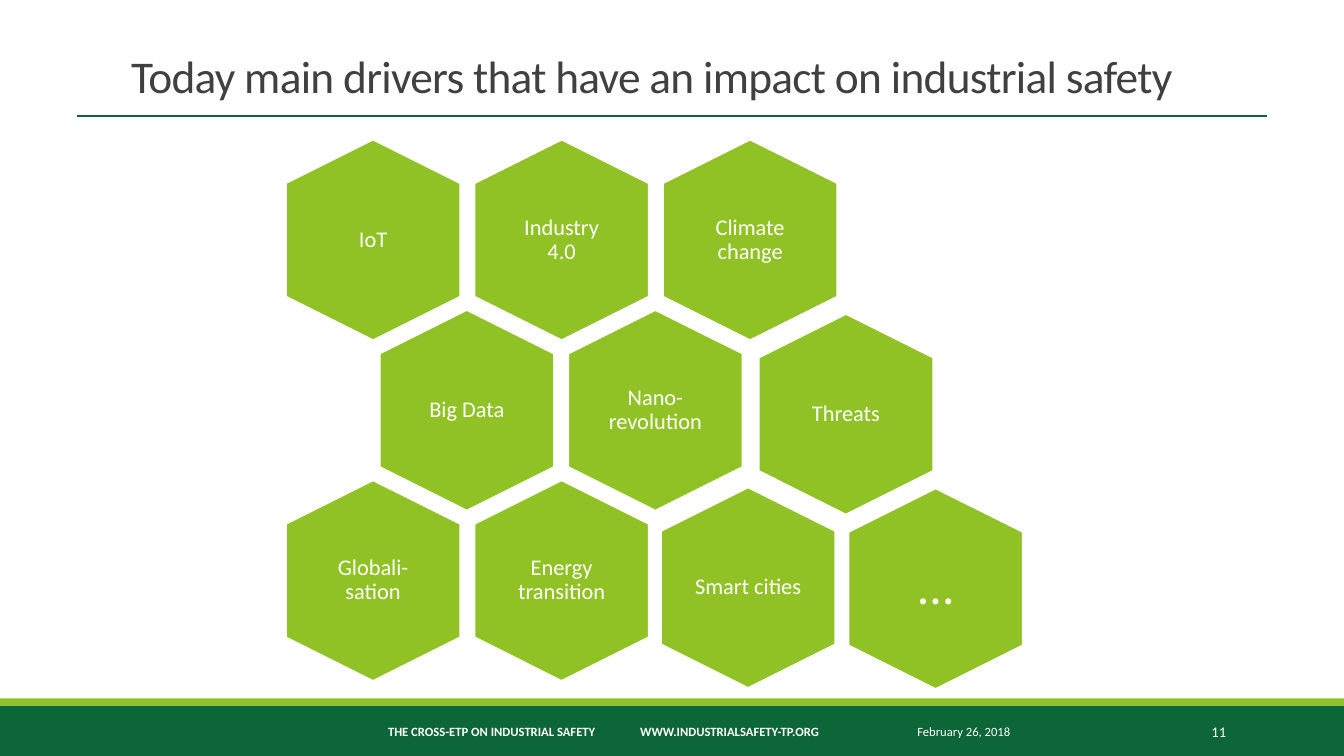
from lxml import etree
from pptx import Presentation
from pptx.dml.color import RGBColor
from pptx.enum.shapes import MSO_CONNECTOR, MSO_SHAPE
from pptx.enum.text import MSO_ANCHOR, MSO_AUTO_SIZE, PP_ALIGN
from pptx.oxml.ns import qn
from pptx.util import Inches, Pt

TITLE = "Today main drivers that have an impact on industrial safety"
# label, column, row, nudge right, nudge down, text inset, text size
DRIVERS = [
    ("IoT", 0, 0, 0, 0, 0, 16),
    ("Industry 4.0", 1, 0, 0, 0, 0.07, 16),
    ("Climate change", 2, 0, 0, 0, 0.07, 16),
    ("Big Data", 0, 1, 0, 0, 0.07, 16),
    ("Nano-revolution", 1, 1, 0, 0, 0, 16),
    ("Threats", 2, 1, 0.02, 0.04, 0.07, 16),
    ("Globali-sation", 0, 2, 0, 0, 0, 16),
    ("Energy transition", 1, 2, 0, 0, 0.07, 16),
    ("Smart cities", 2, 2, -0.02, 0.07, 0, 16),
    ("…", 3, 2, -0.03, 0.08, 0, 36),
]
# text, left, width, alignment, size, bold
FOOTER = [
    ("February 26, 2018", 9, 1.95, PP_ALIGN.LEFT, 9, False),
    ("THE CROSS-ETP ON INDUSTRIAL SAFETY\tWWW.INDUSTRIALSAFETY-TP.ORG",
     3.35, 5.27, PP_ALIGN.CENTER, 9, True),
    ("11", 11.31, 0.95, PP_ALIGN.RIGHT, 10.5, False),
]
COLORS = {"dark": "0D6637", "lime": "90C226", "title": "404040", "white": "FFFFFF"}
FONT = "Calibri"

FIRST_X, FIRST_Y = 3.7, 2.38  # centre of the first hexagon
COLUMN_STEP, ROW_STEP, ODD_ROW_SHIFT = 1.87, 1.69, 0.93
HEX_LENGTH, HEX_BREADTH = 1.99, 1.73
LABEL_WIDTH, LABEL_HEIGHT = 1.19, 1.37


def color(name):
    return RGBColor.from_string(COLORS[name])


def write(frame, text, size, ink="white", align=PP_ALIGN.CENTER,
          anchor=MSO_ANCHOR.MIDDLE, bold=False, spacing=None):
    frame.word_wrap = True
    frame.auto_size = MSO_AUTO_SIZE.NONE
    frame.vertical_anchor = anchor
    paragraph = frame.paragraphs[0]
    paragraph.alignment = align
    paragraph.line_spacing = spacing
    run = paragraph.add_run()
    run.text = text
    run.font.name = FONT
    run.font.size = Pt(size)
    run.font.bold = bold
    run.font.color.rgb = color(ink)
    return run


def add_filled(slide, preset, left, top, width, height, fill):
    shape = slide.shapes.add_shape(
        preset, Inches(left), Inches(top), Inches(width), Inches(height))
    shape.shadow.inherit = False
    shape.fill.solid()
    shape.fill.fore_color.rgb = color(fill)
    shape.line.fill.background()
    return shape


def add_label(slide, left, top, width, height):
    return slide.shapes.add_textbox(
        Inches(left), Inches(top), Inches(width), Inches(height)).text_frame


def add_title(slide):
    title = slide.shapes.title
    title.left, title.top = Inches(1.2), Inches(0.31)
    title.width, title.height = Inches(11), Inches(0.76)
    run = write(title.text_frame, TITLE, 32.4, "title", PP_ALIGN.LEFT,
                MSO_ANCHOR.BOTTOM, spacing=0.85)
    run.font._element.set("spc", "-50")
    rule = slide.shapes.add_connector(
        MSO_CONNECTOR.STRAIGHT, Inches(0.76), Inches(1.15), Inches(12.57), Inches(1.15))
    rule.line.color.rgb = color("dark")
    rule.line.width = Pt(1)
    etree.SubElement(rule._element.spPr, qn("a:effectLst"))


def add_footer(slide):
    add_filled(slide, MSO_SHAPE.RECTANGLE, 0, 7, 13.33, 0.5, "dark")
    add_filled(slide, MSO_SHAPE.RECTANGLE, 0, 6.93, 13.33, 0.07, "lime")
    for text, left, width, align, size, bold in FOOTER:
        write(add_label(slide, left, 7.06, width, 0.4), text, size,
              align=align, bold=bold)


def add_driver(slide, label, column, row, right, down, inset, size):
    x = FIRST_X + column * COLUMN_STEP + row % 2 * ODD_ROW_SHIFT + right
    y = FIRST_Y + row * ROW_STEP + down
    hexagon = add_filled(slide, MSO_SHAPE.HEXAGON, x - HEX_LENGTH / 2,
                         y - HEX_BREADTH / 2, HEX_LENGTH, HEX_BREADTH, "lime")
    hexagon.adjustments[0] = 0.25
    hexagon.adjustments[1] = 1.1547
    hexagon.rotation = 90
    hexagon.line.color.rgb = color("white")
    hexagon.line.width = Pt(1.25)
    frame = add_label(slide, x - LABEL_WIDTH / 2, y - LABEL_HEIGHT / 2,
                      LABEL_WIDTH, LABEL_HEIGHT)
    frame.margin_left = frame.margin_right = Inches(inset)
    frame.margin_top = frame.margin_bottom = Inches(inset)
    write(frame, label, size, spacing=0.9)


def main():
    deck = Presentation()
    deck.slide_width, deck.slide_height = Inches(13.33), Inches(7.5)
    slide = deck.slides.add_slide(deck.slide_layouts[5])
    add_title(slide)
    add_footer(slide)
    for driver in DRIVERS:
        add_driver(slide, *driver)
    deck.save("out.pptx")


if __name__ == "__main__":
    main()
